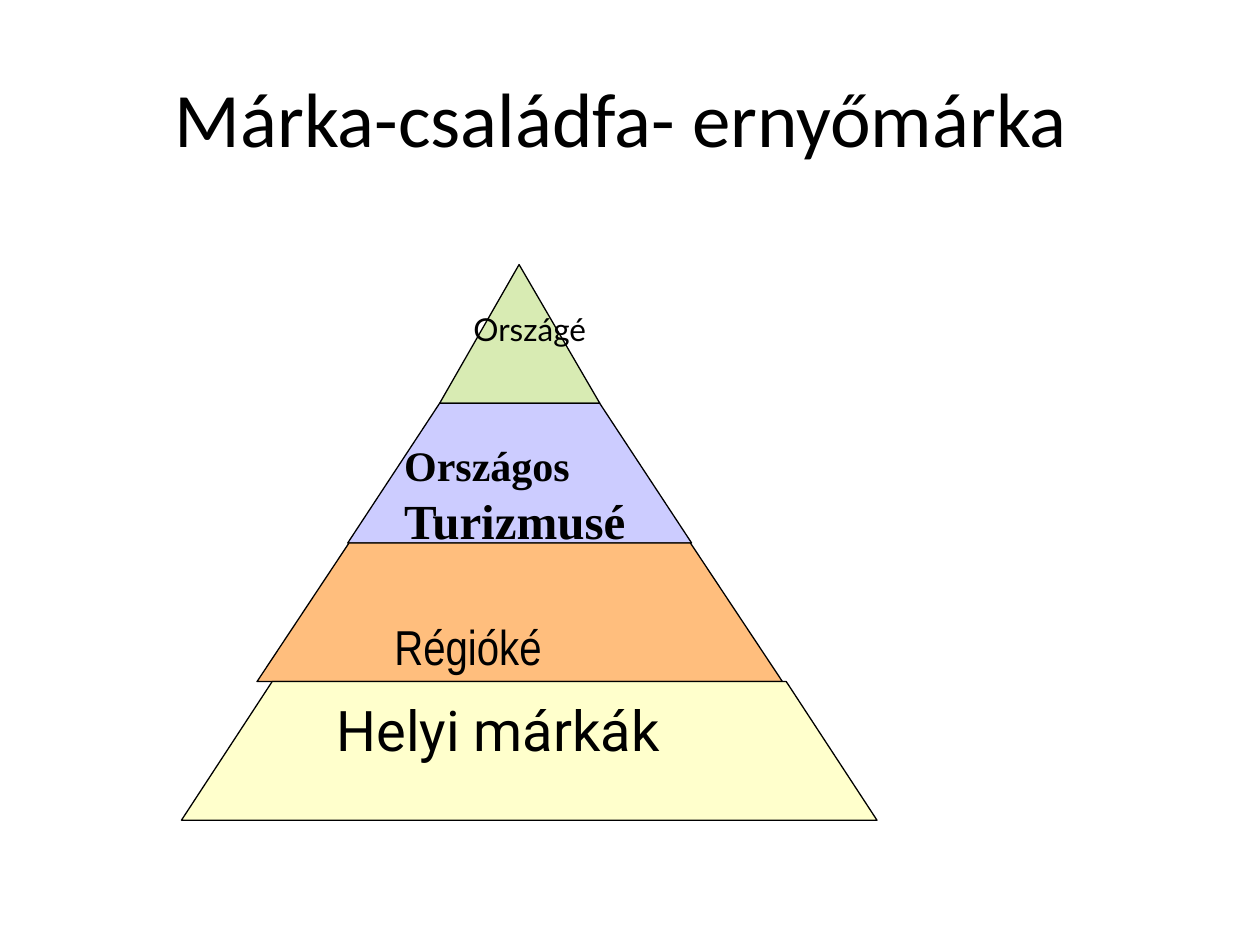
import pptx
import pptx.dml.color
import pptx.enum.text
import pptx.util

Inches = pptx.util.Inches
Pt = pptx.util.Pt
ANCHOR = pptx.enum.text.MSO_ANCHOR
ALIGN = pptx.enum.text.PP_ALIGN


def color(hex_code):
    return pptx.dml.color.RGBColor.from_string(hex_code)


class SlideBuilder:
    ink = "000000"
    line_width = 0.75

    def __init__(self, presentation):
        self.slide = presentation.slides.add_slide(presentation.slide_layouts[5])

    def set_text(self, paragraph, text, font_name, size, bold=False, align=ALIGN.LEFT):
        paragraph.text = text
        paragraph.alignment = align
        font = paragraph.font
        font.name, font.size, font.bold = font_name, Pt(size), bold
        font.color.rgb = color(self.ink)

    def title(self, text, left, top, width, height):
        shape = self.slide.shapes.title
        shape.left, shape.top = Inches(left), Inches(top)
        shape.width, shape.height = Inches(width), Inches(height)
        shape.text_frame.vertical_anchor = ANCHOR.MIDDLE
        self.set_text(shape.text_frame.paragraphs[0], text, "Calibri", 44, align=ALIGN.CENTER)

    def tier(self, points, fill):
        """Draw one closed layer of the pyramid from its corners in inches."""
        corners = [(Inches(x), Inches(y)) for x, y in points]
        builder = self.slide.shapes.build_freeform(*corners[0])
        builder.add_line_segments(corners[1:], close=True)
        shape = builder.convert_to_shape()
        shape.shadow.inherit = False
        shape.fill.solid()
        shape.fill.fore_color.rgb = color(fill)
        shape.line.color.rgb = color(self.ink)
        shape.line.width = Pt(self.line_width)
        return shape

    def tier_label(self, shape, text, font_name, size, left, top):
        """Put text in a tier, inset from its left and top."""
        frame = shape.text_frame
        frame.word_wrap = True
        frame.vertical_anchor = ANCHOR.TOP
        frame.margin_left, frame.margin_top = Inches(left), Inches(top)
        self.set_text(frame.paragraphs[0], text, font_name, size)

    def text_box(self, lines, left, top, width, height, font_name, bold=False):
        box = self.slide.shapes.add_textbox(
            Inches(left), Inches(top), Inches(width), Inches(height))
        frame = box.text_frame
        frame.word_wrap = True
        for index, (text, size) in enumerate(lines):
            paragraph = frame.add_paragraph() if index else frame.paragraphs[0]
            self.set_text(paragraph, text, font_name, size, bold)


def main():
    presentation = pptx.Presentation()
    presentation.slide_width, presentation.slide_height = Inches(10), Inches(7.5)
    builder = SlideBuilder(presentation)
    builder.title("Márka-családfa- ernyőmárka ", 0.5, 0.3, 9, 1.25)

    levels = [2.1, 3.2, 4.31, 5.41, 6.51]
    # Left and right ends of the upper edge, then of the lower edge, and the fill
    tiers = [
        ((4.12, 4.12), (3.49, 4.76), "D8EBB3"),
        ((3.49, 4.76), (2.76, 5.49), "CCCCFF"),
        ((2.77, 5.48), (2.04, 6.21), "FFBE7D"),
        ((2.16, 6.24), (1.44, 6.96), "FFFFCC"),
    ]
    shapes = []
    for (upper, lower, fill), top, bottom in zip(tiers, levels, levels[1:]):
        points = [(upper[0], top), (upper[1], top), (lower[1], bottom), (lower[0], bottom)]
        shapes.append(builder.tier(points, fill))

    builder.tier_label(shapes[2], "Régióké", "Arial Narrow", 28, 1.09, 0.58)
    builder.tier_label(shapes[3], "Helyi márkák", "Roboto", 32, 1.23, 0.11)
    builder.text_box([("Országé", 18)], 3.66, 2.41, 1.9, 0.4, "Lato")
    builder.text_box([("Országos", 24), ("Turizmusé", 28)],
                     3.11, 3.44, 2.54, 0.98, "Times New Roman", bold=True)
    presentation.save("out.pptx")


if __name__ == "__main__":
    main()
